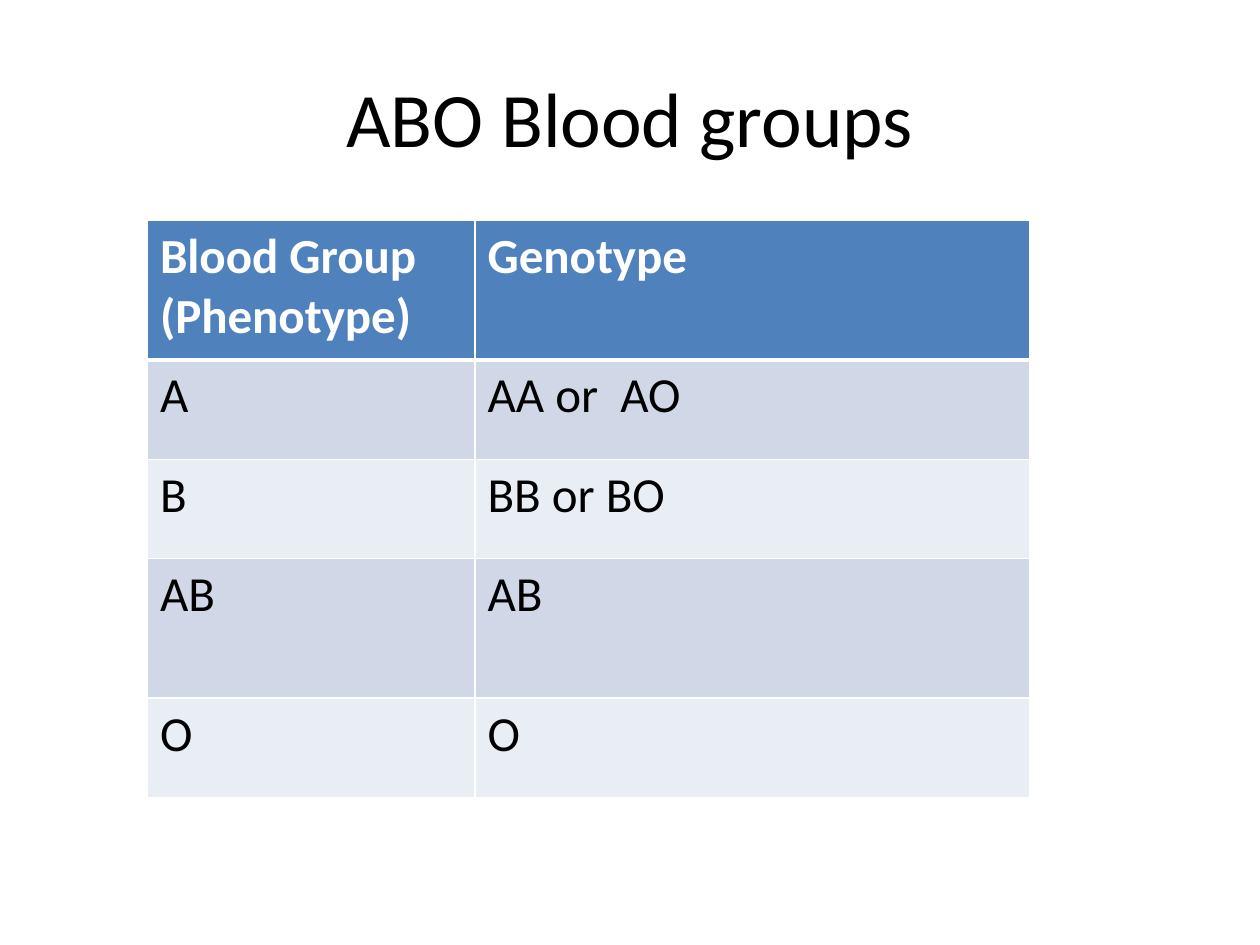
from lxml.etree import SubElement
from pptx import Presentation
from pptx.dml.color import RGBColor
from pptx.enum.text import MSO_ANCHOR, PP_ALIGN
from pptx.oxml.ns import qn
from pptx.util import Inches, Pt

COLORS = {
    "text": "000000",
    "header": "4F81BD",
    "header_text": "FFFFFF",
    "odd_row": "D0D8E8",
    "even_row": "E9EDF4",
    "border": "FFFFFF",
}
FONT = "Calibri"
SLIDE_WIDTH, SLIDE_HEIGHT = 10, 7.5
TITLE_BOX = (0.05 * SLIDE_WIDTH, 0.04 * SLIDE_HEIGHT, 0.9 * SLIDE_WIDTH, SLIDE_HEIGHT / 6)
TABLE_BOX = (1.17, 1.75, 0.7 * SLIDE_WIDTH, 4.58)
COLUMN_SHARES = (2.6, 4.4)
ROW_SHARES = (1.11, 0.79, 0.79, 1.11, 0.79)
BLOOD_GROUPS = [
    ("Blood Group\n(Phenotype)", "Genotype"),
    ("A", "AA or  AO"),
    ("B", "BB or BO"),
    ("AB", "AB"),
    ("O", "O"),
]


def style_text(frame, size, color, bold=False, align=PP_ALIGN.LEFT):
    for paragraph in frame.paragraphs:
        paragraph.alignment = align
        paragraph.font.name = FONT
        paragraph.font.size = Pt(size)
        paragraph.font.bold = bold
        paragraph.font.color.rgb = RGBColor.from_string(COLORS[color])


def add_borders(cell, top, bottom):
    properties = cell._tc.get_or_add_tcPr()
    for side, width in (("L", 1), ("R", 1), ("T", top), ("B", bottom)):
        line = SubElement(properties, qn(f"a:ln{side}"), w=str(Pt(width)))
        fill = SubElement(line, qn("a:solidFill"))
        SubElement(fill, qn("a:srgbClr"), val=COLORS["border"])


def place_title(slide, box, wording):
    title = slide.shapes.title
    title.left, title.top, title.width, title.height = map(Inches, box)
    title.text_frame.text = wording
    title.text_frame.vertical_anchor = MSO_ANCHOR.MIDDLE
    style_text(title.text_frame, 44, "text", align=PP_ALIGN.CENTER)


def place_blood_groups(slide, box, groups):
    left, top, width, height = map(Inches, box)
    table = slide.shapes.add_table(
        len(groups), len(COLUMN_SHARES), left, top, width, height
    ).table
    for column, share in zip(table.columns, COLUMN_SHARES):
        column.width = int(width * share / sum(COLUMN_SHARES))
    for row, share in zip(table.rows, ROW_SHARES):
        row.height = int(height * share / sum(ROW_SHARES))
    for index, group in enumerate(groups):
        is_header = index == 0
        band = "header" if is_header else "odd_row" if index % 2 else "even_row"
        for cell, wording in zip(table.rows[index].cells, group):
            cell.text = wording
            style_text(
                cell.text_frame, 28, "header_text" if is_header else "text", is_header
            )
            add_borders(cell, 3 if index == 1 else 1, 3 if is_header else 1)
            cell.fill.solid()
            cell.fill.fore_color.rgb = RGBColor.from_string(COLORS[band])


def main():
    presentation = Presentation()
    presentation.slide_width = Inches(SLIDE_WIDTH)
    presentation.slide_height = Inches(SLIDE_HEIGHT)
    slide = presentation.slides.add_slide(
        presentation.slide_layouts.get_by_name("Title Only")
    )
    place_title(slide, TITLE_BOX, "ABO Blood groups")
    place_blood_groups(slide, TABLE_BOX, BLOOD_GROUPS)
    presentation.save("out.pptx")


if __name__ == "__main__":
    main()
